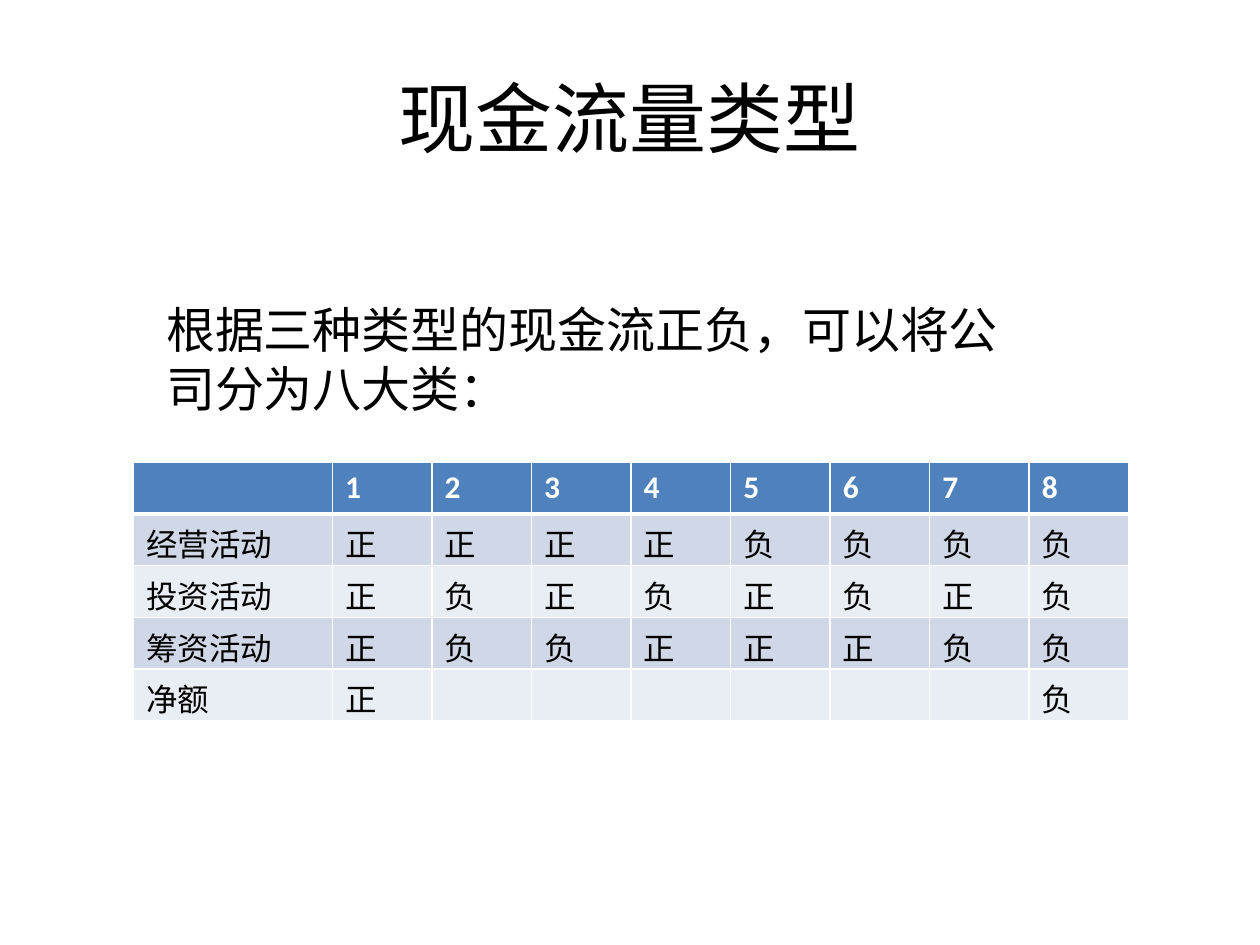
from dataclasses import dataclass

import pptx
import pptx.dml.color
import pptx.enum.text
import pptx.oxml
import pptx.oxml.ns
import pptx.util

Inches = pptx.util.Inches
Pt = pptx.util.Pt
ALIGN = pptx.enum.text.PP_ALIGN
ANCHOR = pptx.enum.text.MSO_ANCHOR


@dataclass
class Label:
    text: str
    left: float
    top: float
    width: float
    height: float
    size: int
    align: ALIGN = ALIGN.LEFT
    anchor: ANCHOR = ANCHOR.TOP


@dataclass
class Row:
    name: str
    marks: str
    fill: str
    ink: str = "000000"
    bold: bool = False


LABELS = [
    Label("现金流量类型", 0.5, 0.3, 9, 1.25, 44, ALIGN.CENTER, ANCHOR.MIDDLE),
    Label("根据三种类型的现金流正负，可以将公司分为八大类：", 1.22, 2.33, 7.01, 1.04, 28),
]
ROWS = [
    Row("", "12345678", "4F81BD", "FFFFFF", True),
    Row("经营活动", "正正正正负负负负", "D0D8E8"),
    Row("投资活动", "正负正负正负正负", "E9EDF4"),
    Row("筹资活动", "正负负正正正负负", "D0D8E8"),
    Row("净额", "正      负", "E9EDF4"),
]


def color(code: str) -> pptx.dml.color.RGBColor:
    return pptx.dml.color.RGBColor.from_string(code)


def style(para, size: int, ink: str, bold: bool = False) -> None:
    font = para.font
    font.name = "Calibri"
    font.size = Pt(size)
    font.bold = bold
    font.color.rgb = color(ink)


def draw_label(slide, label: Label) -> None:
    box = slide.shapes.add_textbox(
        Inches(label.left), Inches(label.top), Inches(label.width), Inches(label.height)
    )
    frame = box.text_frame
    frame.word_wrap = True
    frame.vertical_anchor = label.anchor
    para = frame.paragraphs[0]
    para.text = label.text
    para.alignment = label.align
    style(para, label.size, "000000")


def draw_edge(cell, side: str, width: int) -> None:
    cell._tc.get_or_add_tcPr().append(pptx.oxml.parse_xml(
        f'<a:ln{side} {pptx.oxml.ns.nsdecls("a")} w="{Pt(width)}">'
        f'<a:solidFill><a:srgbClr val="FFFFFF"/></a:solidFill></a:ln{side}>'
    ))


def draw_cell(cell, text: str, row: Row, edges: dict[str, int]) -> None:
    for side, width in edges.items():
        draw_edge(cell, side, width)
    cell.fill.solid()
    cell.fill.fore_color.rgb = color(row.fill)
    para = cell.text_frame.paragraphs[0]
    para.text = text.strip()
    style(para, 18, row.ink, row.bold)


def draw_table(slide, rows: list[Row]) -> None:
    count = len(rows[0].marks) + 1
    table = slide.shapes.add_table(
        len(rows), count, Inches(1.06), Inches(3.67), Inches(7.89), Inches(2.03)
    ).table
    for i, col in enumerate(table.columns):
        col.width = Inches(0.79 if i else 1.58)
    for i, row in enumerate(rows):
        table.rows[i].height = Inches(0.41)
        edges = {"L": 1, "R": 1, "T": 3 if i == 1 else 1, "B": 3 if i == 0 else 1}
        for j, text in enumerate([row.name, *row.marks]):
            draw_cell(table.cell(i, j), text, row, edges)


def main() -> None:
    deck = pptx.Presentation()
    deck.slide_width = Inches(10)
    deck.slide_height = Inches(7.5)
    slide = deck.slides.add_slide(deck.slide_layouts[6])
    title, intro = LABELS
    draw_label(slide, title)
    draw_table(slide, ROWS)
    draw_label(slide, intro)
    deck.save("out.pptx")


if __name__ == "__main__":
    main()
